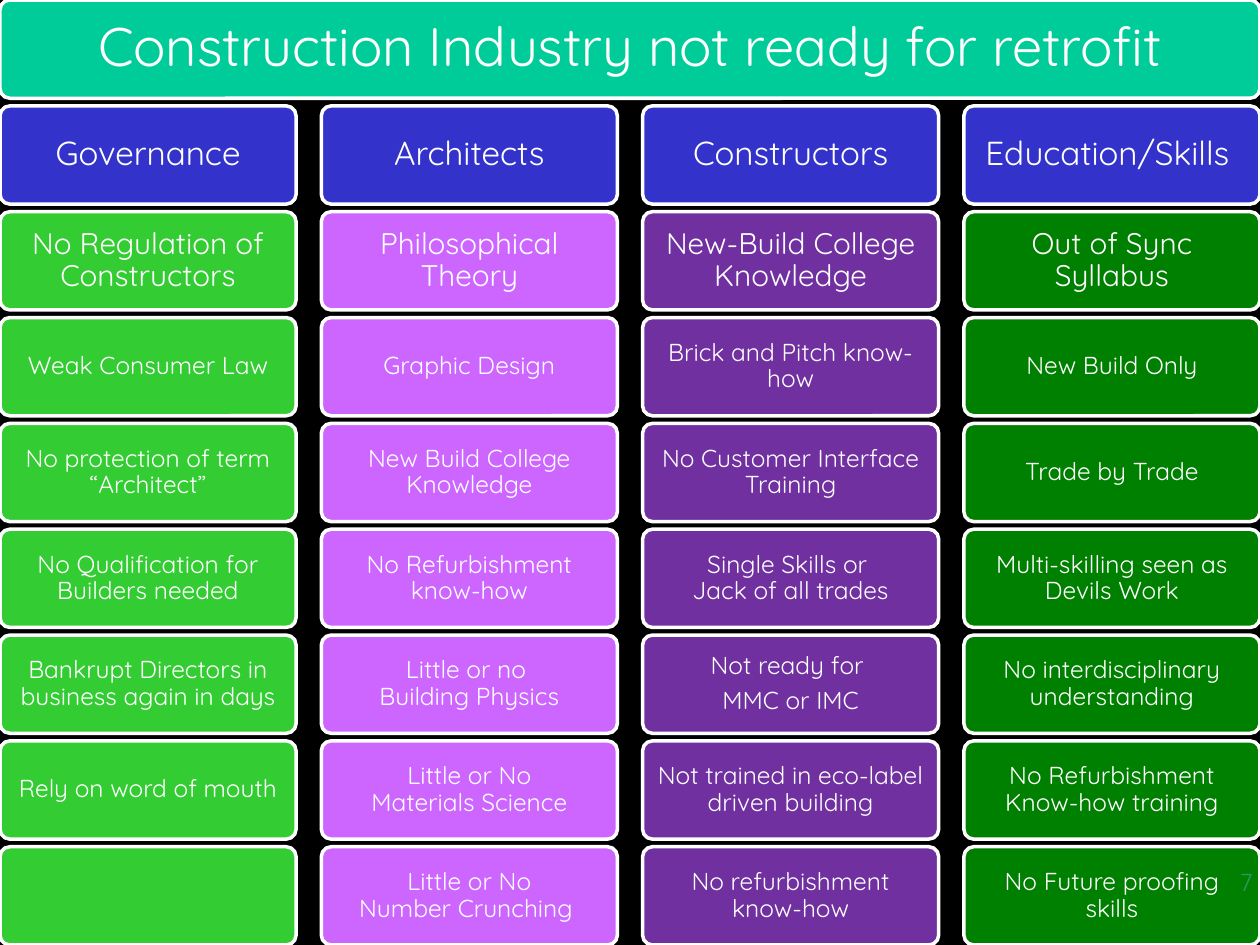
from pptx import Presentation
from pptx import util as u
from pptx.dml.color import RGBColor
from pptx.enum import shapes, text

FONT = "Quicksand"
BLACK = RGBColor(0x00, 0x00, 0x00)
WHITE = RGBColor(0xFF, 0xFF, 0xFF)
TEAL = RGBColor(0x00, 0xCC, 0x99)
BLUE = RGBColor(0x33, 0x33, 0xCC)
LIME = RGBColor(0x33, 0xCC, 0x33)
LILAC = RGBColor(0xCC, 0x66, 0xFF)
PURPLE = RGBColor(0x70, 0x30, 0xA0)
GREEN = RGBColor(0x00, 0x80, 0x00)
NUMBER_GREEN = RGBColor(0x30, 0x95, 0x64)

WIDTH, HEIGHT = u.Inches(10), u.Inches(7.5)
COLUMN_GAP, ROW_GAP = u.Inches(0.2), u.Inches(0.06)
ROWS = 9
HEADING_SIZE, LEAD_SIZE, ITEM_SIZE = 19, 17, 14

COLUMNS = [
    ("Governance", LIME, [
        "No Regulation of Constructors", "Weak Consumer Law",
        "No protection of term “Architect”", "No Qualification for Builders needed",
        "Bankrupt Directors in business again in days", "Rely on word of mouth", ""]),
    ("Architects", LILAC, [
        "Philosophical Theory", "Graphic Design", "New Build College Knowledge",
        "No Refurbishment know-how", "Little or no \vBuilding Physics",
        "Little or No\vMaterials Science", "Little or No\vNumber Crunching "]),
    ("Constructors", PURPLE, [
        "New-Build College Knowledge", "Brick and Pitch know-how",
        "No Customer Interface Training", "Single Skills or \vJack of all trades",
        "Not ready for \nMMC or IMC", "Not trained in eco-label driven building",
        "No refurbishment know-how"]),
    ("Education/Skills ", GREEN, [
        "Out of Sync Syllabus", "New Build Only", "Trade by Trade",
        "Multi-skilling seen as Devils Work", "No interdisciplinary understanding",
        "No Refurbishment Know-how training", "No Future proofing skills"]),
]


def write_text(shape, words, size, margin, color=WHITE, align=text.PP_ALIGN.CENTER):
    """Fill a shape with evenly inset, wrapped text."""
    frame = shape.text_frame
    frame.text = words
    frame.word_wrap = True
    frame.auto_size = text.MSO_AUTO_SIZE.NONE
    frame.vertical_anchor = text.MSO_ANCHOR.MIDDLE
    frame.margin_left = frame.margin_right = u.Inches(margin)
    frame.margin_top = frame.margin_bottom = u.Inches(margin)
    for paragraph in frame.paragraphs:
        paragraph.alignment = align
        paragraph.line_spacing = 0.9
        paragraph.space_before = u.Pt(0)
        paragraph.space_after = u.Pt(round(size * 0.35, 2))
        for run in paragraph.runs:
            run.font.name, run.font.size = FONT, u.Pt(size)
            run.font.color.rgb = color


def add_tile(slide, box, fill):
    """Add a rounded tile with a white outline."""
    tile = slide.shapes.add_shape(shapes.MSO_SHAPE.ROUNDED_RECTANGLE, *box)
    tile.adjustments[0] = 0.1
    tile.shadow.inherit = False
    tile.fill.solid()
    tile.fill.fore_color.rgb = fill
    tile.line.color.rgb = WHITE
    tile.line.width = u.Pt(2)
    return tile


def add_banner(slide, box):
    """Place the title on its full-width banner."""
    add_tile(slide, box, TEAL)
    title = slide.shapes.title
    slide.shapes._spTree.append(title._element)
    title.left, title.top, title.width, title.height = box
    write_text(title, "Construction Industry not ready for retrofit", 31, 0.15)


def add_column(slide, box, heading, fill, items):
    """Stack a heading tile and its item tiles inside a box."""
    left, top, width, height = box
    pitch = (height + ROW_GAP) / (len(items) + 1)
    for row, words in enumerate([heading] + items):
        tile_box = (left, int(top + row * pitch), width, int(pitch - ROW_GAP))
        tile = add_tile(slide, tile_box, fill if row else BLUE)
        size = (HEADING_SIZE, LEAD_SIZE, ITEM_SIZE)[min(row, 2)]
        write_text(tile, words, size, (0.1, 0.09, 0.08)[min(row, 2)])


def add_page_number(slide, box):
    """Put the page number in the lower right corner."""
    number = slide.shapes.add_textbox(*box)
    write_text(number, "7", 14, 0.1, NUMBER_GREEN, text.PP_ALIGN.RIGHT)
    number.text_frame.vertical_anchor = text.MSO_ANCHOR.TOP
    number.text_frame.margin_top = u.Inches(0.05)
    number.text_frame.paragraphs[0].line_spacing = 1.0


def main():
    """Build and save the presentation."""
    presentation = Presentation()
    presentation.slide_width, presentation.slide_height = WIDTH, HEIGHT
    slide = presentation.slides.add_slide(presentation.slide_layouts[5])
    slide.background.fill.solid()
    slide.background.fill.fore_color.rgb = BLACK

    row_pitch = int((HEIGHT + ROW_GAP) / ROWS)
    column_pitch = int((WIDTH + COLUMN_GAP) / len(COLUMNS))
    add_banner(slide, (0, 0, WIDTH, row_pitch - ROW_GAP))
    for index, column in enumerate(COLUMNS):
        box = (index * column_pitch, row_pitch, column_pitch - COLUMN_GAP, HEIGHT - row_pitch)
        add_column(slide, box, *column)
    add_page_number(slide, (u.Inches(7.96), u.Inches(6.83), u.Inches(2.08), u.Inches(0.5)))
    presentation.save("out.pptx")


if __name__ == "__main__":
    main()
